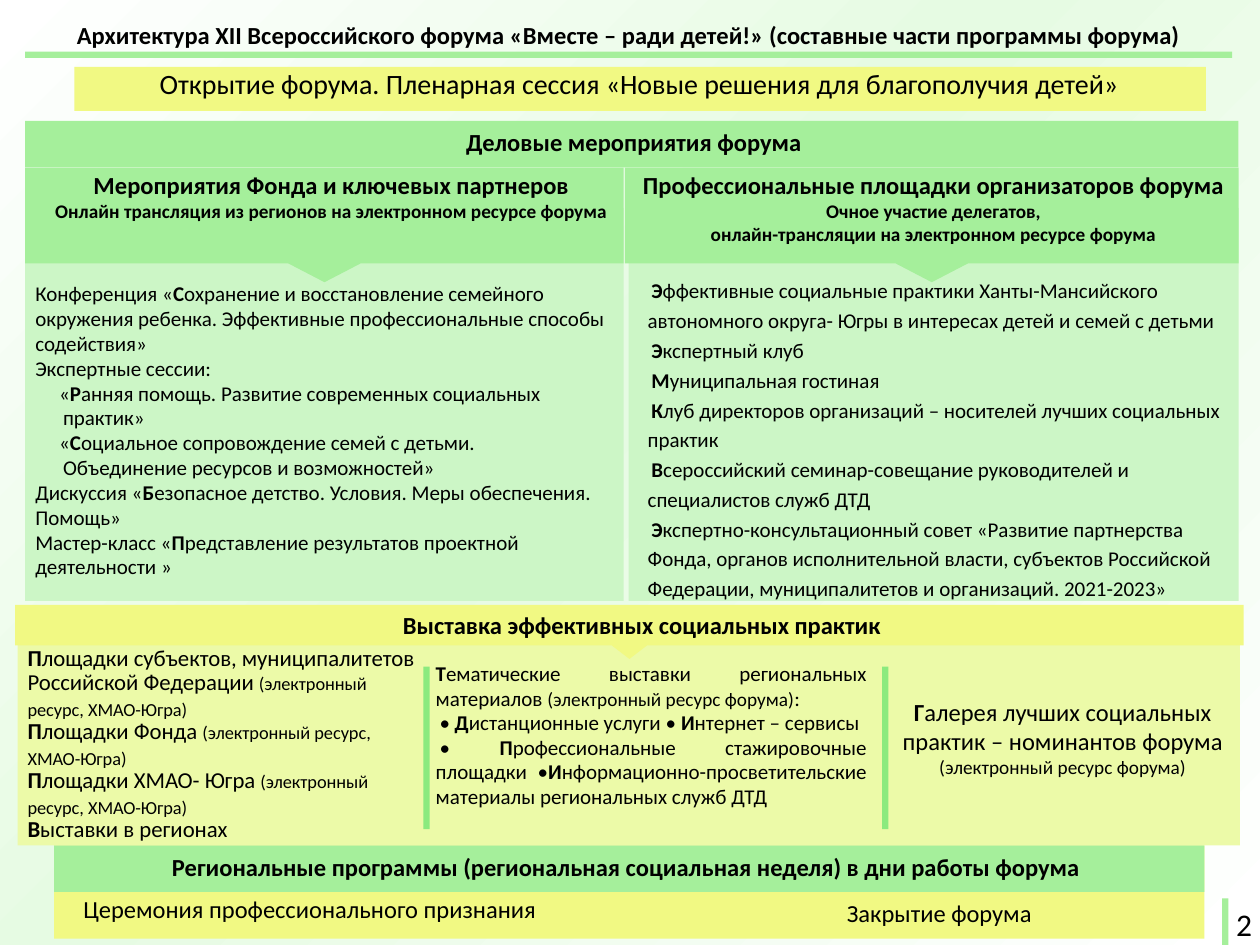
"""Build the forum programme architecture slide."""
from copy import deepcopy
from dataclasses import dataclass

from pptx import Presentation, util as u
from pptx.dml.color import RGBColor
from pptx.enum import shapes, text
from pptx.oxml import parse_xml
from pptx.oxml.ns import nsdecls, qn

COLUMNS, ROWS = 100, 75
CELL = u.Inches(0.1)


@dataclass(frozen=True)
class Theme:
    """Colours, font and type sizes of the slide."""

    font: str = "Calibri"
    ink: str = "000000"
    green: str = "A5EF9B"
    divider: str = "8BEA7E"
    mint: str = "CCF6C6"
    yellow: str = "F1F983"
    lemon: str = "ECFAA8"
    background: tuple = ((0, "FFFFFF"), (0.45, "E6FBE3"), (1, "FFFFFF"))
    number: float = 18
    opening: float = 16
    heading: float = 14
    stands: float = 13
    body: float = 12
    note: float = 11
    fine: float = 10.5


THEME = Theme()
CENTER, JUSTIFY, LEFT = text.PP_ALIGN.CENTER, text.PP_ALIGN.JUSTIFY, text.PP_ALIGN.LEFT

SESSIONS = [
    "Конференция «*С*охранение и восстановление семейного окружения ребенка. "
    "Эффективные профессиональные способы содействия»",
    "Экспертные сессии:",
    "«*Р*анняя помощь. Развитие современных социальных",
    "практик»",
    "«*С*оциальное сопровождение семей с детьми.",
    "Объединение ресурсов и возможностей»",
    "Дискуссия «*Б*езопасное детство. Условия. Меры обеспечения. Помощь»",
    "Мастер-класс «*П*редставление результатов проектной деятельности »",
]
PLATFORMS = [
    "*Э*ффективные социальные практики Ханты-Мансийского автономного округа- Югры "
    "в интересах детей и семей с детьми",
    "*Э*кспертный клуб",
    "*М*униципальная гостиная",
    "*К*луб директоров организаций – носителей лучших социальных практик",
    "*В*сероссийский семинар-совещание руководителей и специалистов служб ДТД",
    "*Э*кспертно-консультационный совет «Развитие партнерства Фонда, органов "
    "исполнительной власти, субъектов Российской Федерации, муниципалитетов "
    "и организаций. 2021-2023»",
]
STANDS = [
    "*П*лощадки субъектов, муниципалитетов Российской Федерации ~(электронный ресурс, ХМАО-Югра)~",
    "*П*лощадки Фонда ~(электронный ресурс, ХМАО-Югра)~",
    "*П*лощадки ХМАО- Югра ~(электронный ресурс, ХМАО-Югра)~",
    "*В*ыставки в регионах",
]
THEMES = [
    "*Т*ематические выставки региональных материалов ~(электронный ресурс форума)~:",
    "• *Д*истанционные услуги • *И*нтернет – сервисы",
    "• *П*рофессиональные стажировочные площадки •*И*нформационно-просветительские "
    "материалы региональных служб ДТД",
]
GALLERY = ["*Г*алерея лучших социальных практик – номинантов форума ~(электронный ресурс форума)~"]


def cells(*values):
    """Convert grid cells to slide lengths."""
    return [u.Emu(round(value * CELL)) for value in values]


def paint_background(slide):
    """Fill the slide with a diagonal three-stop gradient."""
    fill = slide.background.fill
    fill.gradient()
    fill.gradient_angle = 315
    stop_list = slide.element.find(".//" + qn("a:gsLst"))
    stop_list.append(deepcopy(stop_list[-1]))
    for stop, (position, color) in zip(fill.gradient_stops, THEME.background):
        stop.position = position
        stop.color.rgb = RGBColor.from_string(color)


def add_block(slide, box, color, kind=shapes.MSO_SHAPE.RECTANGLE):
    """Add a flat shape without outline."""
    shape = slide.shapes.add_shape(kind, *cells(*box))
    shape.shadow.inherit = False
    shape.fill.solid()
    shape.fill.fore_color.rgb = RGBColor.from_string(color)
    shape.line.fill.background()
    return shape


def add_callout(slide, box, color, adjustments):
    """Add a band whose arrow points down, given by its visible box."""
    left, top, width, height = box
    shift = (width - height) / 2
    turned = (left + shift, top - shift, height, width)
    shape = add_block(slide, turned, color, shapes.MSO_SHAPE.RIGHT_ARROW_CALLOUT)
    shape.rotation = 90
    for index, value in enumerate(adjustments):
        shape.adjustments[index] = value


def add_runs(paragraph, line, size, small):
    """Write a line where * toggles bold and ~ toggles the small size."""
    for bold, part in enumerate(line.split("*")):
        for fine, words in enumerate(part.split("~")):
            if words:
                run = paragraph.add_run()
                run.text = words
                formats = {"name": THEME.font, "bold": bold % 2 == 1,
                           "size": u.Pt(small if fine % 2 else size)}
                for name, value in formats.items():
                    setattr(run.font, name, value)
                run.font.color.rgb = RGBColor.from_string(THEME.ink)


def indent(paragraph, margin=0, first=0):
    """Set the margin and first-line indent, in cells, without a list marker."""
    properties = paragraph._p.get_or_add_pPr()
    for name, value in zip(("marL", "indent"), cells(margin, first)):
        properties.set(name, str(value))
    properties.append(parse_xml(f"<a:buNone {nsdecls('a')}/>"))


def write(shape, lines, size, align=CENTER, spacing=None, small=THEME.note, indents=None):
    """Fill a shape with formatted paragraphs."""
    frame = shape.text_frame
    formats = {"word_wrap": True, "auto_size": text.MSO_AUTO_SIZE.NONE,
               "vertical_anchor": text.MSO_ANCHOR.TOP}
    for name, value in formats.items():
        setattr(frame, name, value)
    for index, line in enumerate(lines):
        paragraph = frame.add_paragraph() if index else frame.paragraphs[0]
        paragraph.alignment = align
        paragraph.space_before = u.Pt(0)
        paragraph.line_spacing = u.Pt(spacing) if spacing else 1.0
        indent(paragraph, **(indents or {}).get(index, {}))
        add_runs(paragraph, line, size, small)


def add_text(slide, box, lines, size, **options):
    """Add a text box."""
    write(slide.shapes.add_textbox(*cells(*box)), lines, size, **options)


def fill_placeholder(shape, box, lines, size, **options):
    """Move a placeholder to the front, place it and write in it."""
    shape.element.getparent().append(shape.element)
    for name, value in zip(("left", "top", "width", "height"), cells(*box)):
        setattr(shape, name, value)
    write(shape, lines, size, **options)


def add_bands(slide):
    """Draw the coloured bands, panels and dividers."""
    for box, color in (
        ((4.3, 67.1, 91.3, 7.4), THEME.yellow),
        ((4.3, 67.1, 91.3, 3.7), THEME.green),
        ((2, 16.5, 47.5, 31.2), THEME.mint),
        ((49.9, 16.5, 48.4, 31.2), THEME.mint),
        ((5.9, 5.3, 89.8, 3.5), THEME.yellow),
        ((2, 9.6, 96.3, 3.7), THEME.green),
        ((2, 4.1, 95.8, 0.5), THEME.green),
        ((1.4, 49.9, 97, 17.2), THEME.lemon),
        ((33.6, 52.9, 0.5, 12.9), THEME.divider),
        ((70, 52.9, 0.5, 12.9), THEME.divider),
        ((97, 71.3, 0.5, 3.7), THEME.green),
    ):
        add_block(slide, box, color)
    for left, width in ((2, 47.5), (49.6, 48.7)):
        add_callout(slide, (left, 13.3, width, 9.1), THEME.green, (0.583, 0.318, 0.165, 0.906))
    add_callout(slide, (1.2, 48, 97.5, 4.3), THEME.yellow, (0.653, 0.327, 0.25, 0.906))


def add_headings(slide):
    """Write the band headings and the page number."""
    for box, lines, size in (
        ((4.9, 4.8, 91.7, 3.7),
         ["Открытие форума. Пленарная сессия «Новые решения для благополучия детей»"], THEME.opening),
        ((4.9, 9.6, 90.8, 3.4), ["*Деловые мероприятия форума*"], THEME.heading),
        ((3.2, 13, 46.2, 5.2),
         ["*Мероприятия Фонда и ключевых партнеров*",
          "*~Онлайн трансляция из регионов на электронном ресурсе форума~*"], THEME.heading),
        ((49.9, 13, 48.4, 7.1),
         ["*Профессиональные площадки организаторов форума ~Очное участие делегатов,~*",
          "*~онлайн-трансляции на электронном ресурсе форума~*"], THEME.heading),
        ((4.9, 47.9, 92.1, 3.4), ["*Выставка эффективных социальных практик*"], THEME.heading),
        ((1.5, 67.1, 96.4, 3.4),
         ["*Региональные программы (региональная социальная неделя) в дни работы форума*"],
         THEME.heading),
        ((0.5, 70.5, 48.2, 3.4), ["Церемония профессионального признания"], THEME.heading),
        ((52.5, 70.8, 44.1, 3.4), ["Закрытие форума"], THEME.heading),
        ((97.1, 71.3, 3.3, 4), ["2"], THEME.number),
    ):
        add_text(slide, box, lines, size)


def main():
    """Assemble and save the slide."""
    presentation = Presentation()
    presentation.slide_width, presentation.slide_height = cells(COLUMNS, ROWS)
    slide = presentation.slides.add_slide(presentation.slide_layouts[3])
    title, sessions, platforms = list(slide.placeholders)
    paint_background(slide)
    add_bands(slide)
    fill_placeholder(title, (1.5, 1.1, 96.8, 3.4), [
        "*Архитектура XII Всероссийского форума «Вместе – ради детей!» "
        "(составные части программы форума)*"], THEME.heading)
    add_headings(slide)
    fill_placeholder(sessions, (1.8, 21.8, 47.5, 24.6), SESSIONS, THEME.body, align=LEFT,
                     spacing=14.2, indents={row: {"margin": 1.9 + 0.3 * (row % 2)}
                                            for row in range(2, 6)})
    fill_placeholder(platforms, (50.4, 21.2, 48, 29.6), PLATFORMS, THEME.body, align=LEFT,
                     spacing=17, indents={row: {"first": 0.3} for row in range(len(PLATFORMS))})
    add_text(slide, (1.2, 50.8, 33.5, 19.3), STANDS, THEME.stands, align=LEFT,
             spacing=14, small=THEME.fine)
    add_text(slide, (33.6, 52, 36.2, 16.8), THEMES, THEME.body, align=JUSTIFY, spacing=14,
             indents={row: {"first": 0.3} for row in (1, 2)})
    add_text(slide, (70, 54.8, 28.7, 7.7), GALLERY, THEME.heading)
    presentation.save("out.pptx")


if __name__ == "__main__":
    main()
